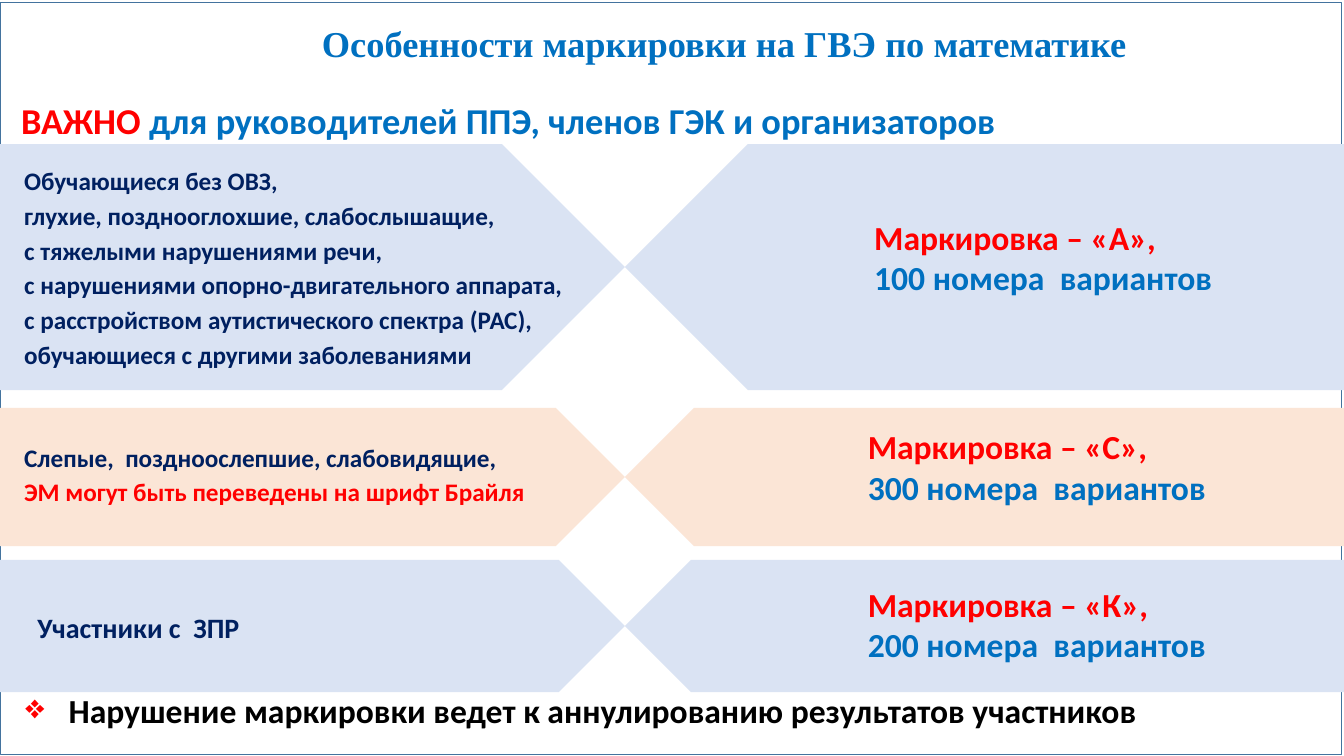
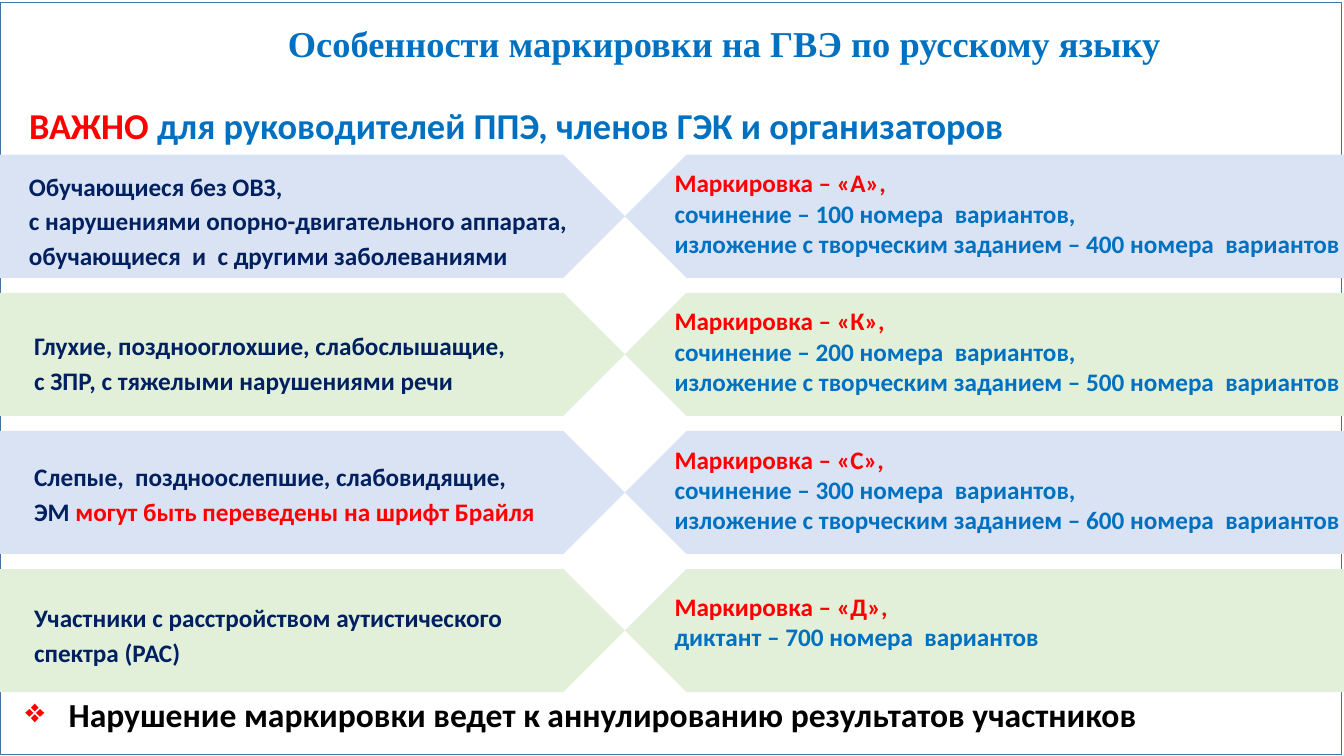
from dataclasses import dataclass

from lxml.etree import SubElement
from pptx import Presentation
from pptx.dml.color import RGBColor
from pptx.enum.shapes import MSO_SHAPE as Shape
from pptx.enum.text import MSO_ANCHOR as Anchor, MSO_AUTO_SIZE as AutoSize, PP_ALIGN as Align
from pptx.oxml.ns import qn
from pptx.util import Cm, Pt

COLORS = {
    "frame": "43739E",
    "blue": "0070C0",
    "navy": "002060",
    "red": "FF0000",
    "black": "000000",
    "sky": "DAE3F3",
    "peach": "FBE5D6",
    "green": "E2F0D9",
}
BODY, SERIF = "Calibri", "Times New Roman"
SLIDE_W, SLIDE_H = 33.87, 19.05
MEETING_X = 15.75
GROUP_RIGHT = 14.8
BAND_H = 2.31
INDENT = 1


@dataclass
class Note:
    """Lines of (text, colour) runs, offset from the corner of their arrow."""
    dx: float
    dy: float
    size: int
    lines: list


@dataclass
class Row:
    """A pair of facing arrows: who takes the exam and how it is marked."""
    top: float
    height: float
    fill: str
    group: Note
    marking: Note


def color(key):
    """Return the named colour."""
    return RGBColor.from_string(COLORS[key])


def add_runs(paragraph, runs, size, font=BODY):
    """Add bold runs of one size to a paragraph."""
    for text, key in runs:
        run = paragraph.add_run()
        run.text = text
        run.font.size, run.font.name, run.font.bold = Pt(size), font, True
        run.font.color.rgb = color(key)


def add_band(slide, box, runs, size, font=BODY):
    """Add a centred one-line band and return its paragraph."""
    frame = slide.shapes.add_textbox(*map(Cm, box)).text_frame
    frame.word_wrap = True
    frame.vertical_anchor = Anchor.MIDDLE
    frame.margin_left = frame.margin_right = Cm(0.1)
    frame.margin_top = frame.margin_bottom = Cm(0.1)
    paragraph = frame.paragraphs[0]
    paragraph.alignment = Align.CENTER
    paragraph.line_spacing = 0.9
    add_runs(paragraph, runs, size, font)
    return paragraph


def add_warning(slide, top):
    """Add the bulleted warning at the foot of the slide."""
    runs = [("Нарушение маркировки ведет к аннулированию результатов участников", "black")]
    paragraph = add_band(slide, (0, top, 29.29, 2), runs, 24)
    props = paragraph._p.get_or_add_pPr()
    props.set("marL", str(Cm(1.09)))
    props.set("indent", str(-Cm(1.09)))
    bullet_color = SubElement(props, qn("a:buClr"))
    SubElement(bullet_color, qn("a:srgbClr"), val=COLORS["red"])
    SubElement(props, qn("a:buChar"), char="❖")


def add_frame(slide):
    """Outline the slide."""
    outline = slide.shapes.add_shape(Shape.RECTANGLE, 0, Cm(0.05), Cm(33.81), Cm(18.95))
    outline.shadow.inherit = False
    outline.fill.background()
    outline.line.color.rgb = color("frame")
    outline.line.width = Pt(0.25)


def add_arrow(slide, row, left, width, flipped=False):
    """Add one of the facing arrows of a row."""
    arrow = slide.shapes.add_shape(
        Shape.PENTAGON, Cm(left), Cm(row.top), Cm(width), Cm(row.height))
    arrow.shadow.inherit = False
    arrow.fill.solid()
    arrow.fill.fore_color.rgb = color(row.fill)
    arrow.line.fill.background()
    if flipped:
        arrow.element.spPr.xfrm.set("flipH", "1")


def add_note(slide, note, left, top, right, spacing, indent=0):
    """Write a note from its offset corner up to the right edge."""
    x = left + note.dx
    height = len(note.lines) * note.size * 0.043 * spacing + 0.25
    frame = slide.shapes.add_textbox(
        Cm(x), Cm(top + note.dy), Cm(right - x), Cm(height)).text_frame
    frame.word_wrap = True
    frame.auto_size = AutoSize.SHAPE_TO_FIT_TEXT
    if indent:
        frame.margin_right = 0
    for index, runs in enumerate(note.lines):
        paragraph = frame.add_paragraph() if index else frame.paragraphs[0]
        if indent:
            paragraph._p.get_or_add_pPr().set("marL", str(Cm(indent)))
        paragraph.line_spacing = spacing
        add_runs(paragraph, runs, note.size)


def add_row(slide, row):
    """Add the facing arrows of a row with their notes."""
    add_arrow(slide, row, MEETING_X, SLIDE_W - MEETING_X, flipped=True)
    add_arrow(slide, row, 0, MEETING_X)
    add_note(slide, row.group, 0, row.top, GROUP_RIGHT, 1.15)
    add_note(slide, row.marking, MEETING_X, row.top, SLIDE_W, 1.0, INDENT)


def group(dx, dy, *texts, size=18):
    """Describe the participants in navy lines."""
    return Note(dx, dy, size, [[(t, "navy")] if isinstance(t, str) else t for t in texts])


def marking(dx, dy, size, letter, *texts):
    """Describe a marking letter and its variant numbers."""
    return Note(dx, dy, size, [[(f"Маркировка – «{letter}»,", "red")]]
                + [[(t, "blue")] for t in texts])


def essay_marking(letter, essay, retelling):
    """Describe the marking of an essay and a retelling."""
    return marking(0, 0.2, 18, letter, f"сочинение – {essay} номера  вариантов,",
                   f"изложение с творческим заданием – {retelling} номера  вариантов")


def add_marking_slide(deck, subject, rows, subtitle_box, warning_top):
    """Add a slide on the marking rules of one subject."""
    slide = deck.slides.add_slide(deck.slide_layouts[6])
    add_frame(slide)
    for row in rows:
        add_row(slide, row)
    add_band(slide, (3.33, 0, 29.87, BAND_H),
             [(f"Особенности маркировки на ГВЭ по {subject}", "blue")], 26, SERIF)
    add_band(slide, (*subtitle_box, 25.65, BAND_H),
             [("ВАЖНО", "red"),
              (" для руководителей ППЭ, членов ГЭК и организаторов", "blue")], 26)
    add_warning(slide, warning_top)


def math_rows():
    """Return the rows of the mathematics slide."""
    return [
        Row(3.63, 6.2, "sky",
            group(0.36, 0.3, "Обучающиеся без ОВЗ,",
                  "глухие, позднооглохшие, слабослышащие,",
                  "с тяжелыми нарушениями речи,",
                  "с нарушениями опорно-двигательного аппарата,",
                  "с расстройством аутистического спектра (РАС),",
                  "обучающиеся с другими заболеваниями"),
            marking(5.03, 1.7, 24, "А", "100 номера  вариантов")),
        Row(10.28, 3.48, "peach",
            group(0.36, 0.62, "Слепые,  поздноослепшие, слабовидящие,",
                  [("ЭМ могут быть переведены на шрифт Брайля", "red")]),
            marking(4.87, 0.34, 24, "С", "300 номера  вариантов")),
        Row(14.11, 3.33, "sky",
            group(0.69, 1.03, "Участники с  ЗПР", size=20),
            marking(4.87, 0.47, 24, "К", "200 номера  вариантов")),
    ]


def russian_rows():
    """Return the evenly spaced rows of the Russian language slide."""
    notes = [
        (group(0.48, 0.17, "Обучающиеся без ОВЗ,",
               "с нарушениями опорно-двигательного аппарата,",
               "обучающиеся  и  с другими заболеваниями"),
         essay_marking("А", 100, 400)),
        (group(0.61, 0.7, "Глухие, позднооглохшие, слабослышащие,",
               "с ЗПР, с тяжелыми нарушениями речи"),
         essay_marking("К", 200, 500)),
        (group(0.61, 0.52, "Слепые,  поздноослепшие, слабовидящие,",
               [("ЭМ ", "navy"), ("могут быть переведены на шрифт Брайля", "red")]),
         essay_marking("С", 300, 600)),
        (group(0.61, 0.6, "Участники с расстройством аутистического спектра (РАС)"),
         marking(0, 0.44, 18, "Д", "диктант – 700 номера  вариантов")),
    ]
    return [Row(3.9 + 3.48 * i, 3.1, ("sky", "green")[i % 2], *pair)
            for i, pair in enumerate(notes)]


def main():
    """Build and save the deck."""
    deck = Presentation()
    deck.slide_width, deck.slide_height = Cm(SLIDE_W), Cm(SLIDE_H)
    add_marking_slide(deck, "математике", math_rows(), (0, 1.93), 16.95)
    add_marking_slide(deck, "русскому языку", russian_rows(), (0.2, 2.06), 17.05)
    deck.save("out.pptx")


if __name__ == "__main__":
    main()
